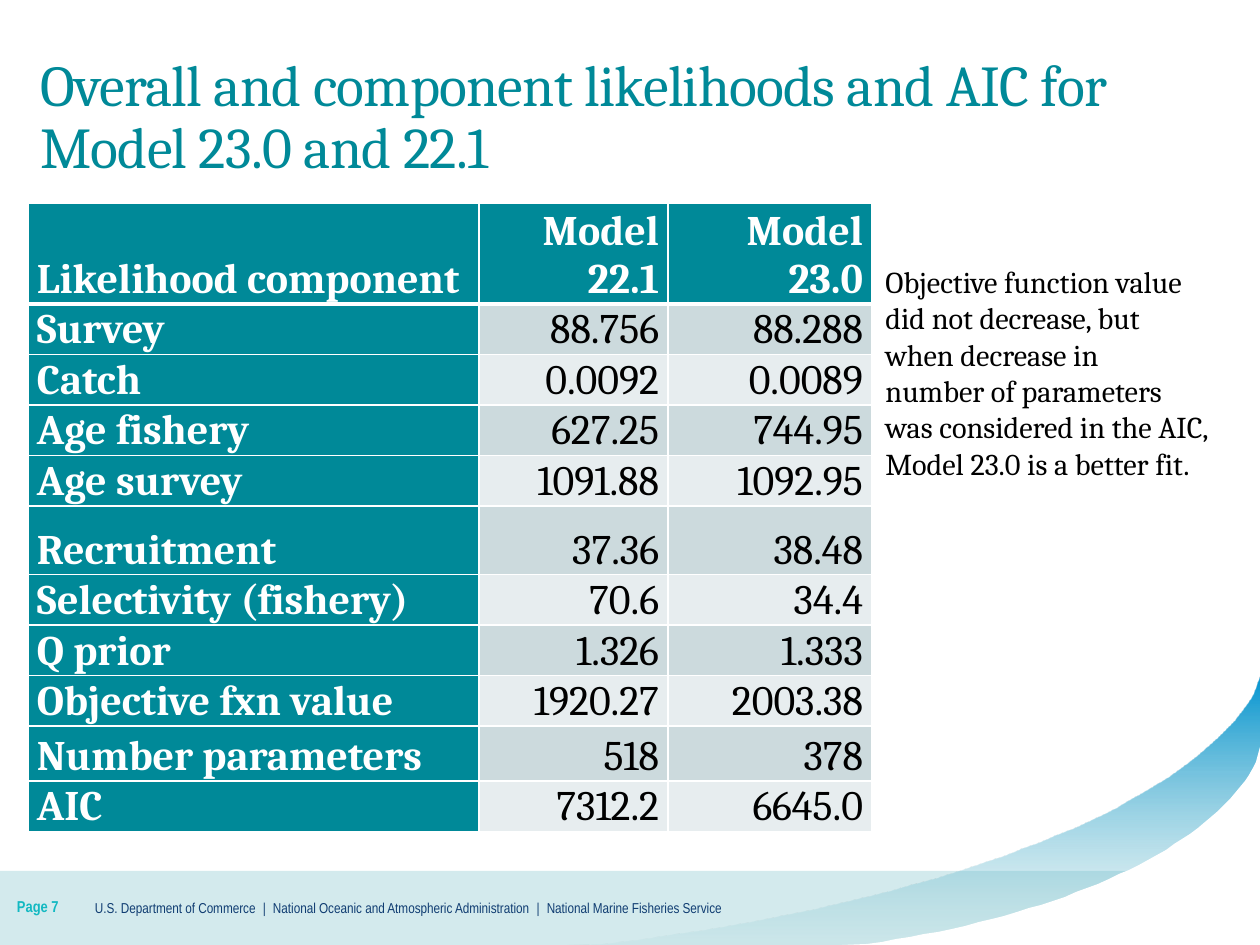
from lxml.etree import SubElement
from pptx import Presentation
from pptx.dml.color import RGBColor
from pptx.enum.shapes import MSO_SHAPE
from pptx.enum.text import MSO_ANCHOR, PP_ALIGN
from pptx.oxml.ns import qn
from pptx.util import Emu, Pt

SCALE = 914400 / 126  # EMU per px

TEAL = RGBColor(0x00, 0x89, 0x98)
BAND = RGBColor(0xD3, 0xEA, 0xED)
SWOOSH_TOP = RGBColor(0x00, 0x93, 0xD0)
SWOOSH_END = RGBColor(0x84, 0xC4, 0xCC)
NAVY = RGBColor(0x10, 0x3D, 0x72)
AQUA = RGBColor(0x13, 0xB9, 0xC2)
ROW_DARK = RGBColor(0xCC, 0xDA, 0xDD)
ROW_LIGHT = RGBColor(0xE7, 0xED, 0xEF)
WHITE = RGBColor(0xFF, 0xFF, 0xFF)
BLACK = RGBColor(0x00, 0x00, 0x00)

HEADER = ("Likelihood component", "Model 22.1", "Model 23.0")
LIKELIHOODS = [
    ("Survey", "88.756", "88.288"),
    ("Catch", "0.0092", "0.0089"),
    ("Age fishery", "627.25", "744.95"),
    ("Age survey", "1091.88", "1092.95"),
    ("Recruitment", "37.36", "38.48"),
    ("Selectivity (fishery)", "70.6", "34.4"),
    ("Q prior", "1.326", "1.333"),
    ("Objective fxn value", "1920.27", "2003.38"),
    ("Number parameters", "518", "378"),
    ("AIC", "7312.2", "6645.0"),
]
COLUMN_WIDTHS = (451, 189, 204)
ROW_HEIGHTS = (101, 50, 47, 50, 50, 69, 50, 50, 50, 55, 50)


def px(length):
    return Emu(round(length * SCALE))


def curve(start, control_a, control_b, end, steps=40):
    """Points along a cubic Bezier curve."""
    points = []
    for step in range(steps + 1):
        t = step / steps
        weights = ((1 - t) ** 3, 3 * t * (1 - t) ** 2, 3 * t * t * (1 - t), t ** 3)
        points.append(tuple(
            sum(w * p[axis] for w, p in zip(weights, (start, control_a, control_b, end)))
            for axis in (0, 1)))
    return points


class SlideBuilder:
    def __init__(self, slide):
        self.slide = slide
        self.heading_font = "Cambria"
        self.footer_font = "Arial Narrow"

    def set_font(self, font, size, color, name, bold=False):
        for key, value in dict(size=Pt(size), name=name, bold=bold).items():
            setattr(font, key, value)
        font.color.rgb = color

    def band(self, left, top, width, height, color):
        band = self.slide.shapes.add_shape(
            MSO_SHAPE.RECTANGLE, px(left), px(top), px(width), px(height))
        self.paint(band, color)

    def paint(self, shape, color):
        shape.shadow.inherit = False
        shape.line.fill.background()
        shape.fill.solid()
        shape.fill.fore_color.rgb = color

    def outline(self, points, color):
        builder = self.slide.shapes.build_freeform(*points[0], scale=SCALE)
        builder.add_line_segments(points[1:], close=True)
        outline = builder.convert_to_shape()
        self.paint(outline, color)
        return outline

    def fade(self, shape, top_color, end_color, end_alpha):
        shape.fill.gradient()
        shape.fill.gradient_angle = 270
        stops = shape.fill.gradient_stops
        for stop, color, position in zip(stops, (top_color, end_color), (0, 0.99)):
            stop.color.rgb = color
            stop.position = position
        end_rgb = list(shape.fill._xPr.iter(qn("a:srgbClr")))[-1]
        SubElement(end_rgb, qn("a:alpha"), val=str(end_alpha * 1000))

    def text(self, box, paragraphs, size, color, font, bold=False, spacing=None,
             tracking=None, **frame_format):
        frame = self.slide.shapes.add_textbox(*map(px, box)).text_frame
        for key, value in dict(word_wrap=True, **frame_format).items():
            setattr(frame, key, value)
        for index, words in enumerate(paragraphs):
            paragraph = frame.add_paragraph() if index else frame.paragraphs[0]
            paragraph.line_spacing = spacing
            run = paragraph.add_run()
            run.text = words
            self.set_font(run.font, size, color, font, bold)
            if tracking:
                run.font._element.set("spc", str(tracking))

    def border(self, cell, side, width):
        line = SubElement(cell._tc.get_or_add_tcPr(), qn(f"a:ln{side}"), w=str(Pt(width)))
        SubElement(SubElement(line, qn("a:solidFill")), qn("a:srgbClr"), val=str(WHITE))

    def cell(self, cell, words, row, column):
        label = row == 0 or column == 0
        for side in "LRTB":
            under_header = (row, side) in ((0, "B"), (1, "T"))
            self.border(cell, side, 3 if under_header else 1)
        cell.fill.solid()
        cell.fill.fore_color.rgb = TEAL if label else ROW_DARK if row % 2 else ROW_LIGHT
        cell_format = dict(margin_left=px(9), margin_right=px(9), margin_top=0,
                           margin_bottom=0, vertical_anchor=MSO_ANCHOR.BOTTOM)
        for key, value in cell_format.items():
            setattr(cell, key, value)
        paragraph = cell.text_frame.paragraphs[0]
        paragraph.alignment = PP_ALIGN.RIGHT if column else PP_ALIGN.LEFT
        run = paragraph.add_run()
        run.text = words
        self.set_font(run.font, 24, WHITE if label else BLACK, self.heading_font, label)

    def table(self, left, top, rows, widths, heights):
        table = self.slide.shapes.add_table(
            len(rows), len(widths), px(left), px(top),
            px(sum(widths)), px(sum(heights))).table
        for column, width in zip(table.columns, widths):
            column.width = px(width)
        for r, (values, height) in enumerate(zip(rows, heights)):
            table.rows[r].height = px(height)
            for c, words in enumerate(values):
                self.cell(table.cell(r, c), words, r, c)


def main():
    deck = Presentation()
    deck.slide_width, deck.slide_height = px(1260), px(945)
    page = SlideBuilder(deck.slides.add_slide(deck.slide_layouts[6]))

    # Footer band and swoosh
    page.band(0, 871, 1260, 74, BAND)
    swoosh = page.outline(
        [(558, 945), (1260, 945), (1260, 674)]
        + curve((1252, 696), (1181, 811), (930, 905), (600, 944)), WHITE)
    page.fade(swoosh, SWOOSH_TOP, SWOOSH_END, 9)
    page.outline(
        [(842, 945), (1260, 945), (1260, 747)]
        + curve((1256, 762), (1213, 847), (1063, 916), (867, 944)), WHITE)

    # Footer text
    footer_format = dict(font=page.footer_font, vertical_anchor=MSO_ANCHOR.MIDDLE,
                         margin_left=0, margin_right=0)
    page.text((95, 871, 922, 74), [
        "U.S. Department of Commerce\u2002|\u2002National Oceanic and Atmospheric "
        "Administration\u2002|\u2002National Marine Fisheries Service"],
        8.2, NAVY, **footer_format)
    page.text((17, 868, 77, 77), ["Page 7"], 9, AQUA, bold=True,
              margin_top=0, margin_bottom=0, **footer_format)

    # Title
    page.text((28, 50, 1145, 183),
              ["Overall and component likelihoods and AIC for Model 23.0 and 22.1"],
              33, TEAL, page.heading_font, spacing=0.9, tracking=-40)

    # Likelihood table
    page.table(28, 203, [HEADER, *LIKELIHOODS], COLUMN_WIDTHS, ROW_HEIGHTS)

    # Comment on the fit
    page.text((873, 257, 359, 270), [
        "Objective function value did not decrease, but",
        "when decrease in",
        "number of parameters",
        "was considered in the AIC, Model 23.0 is a better fit."],
        17.3, BLACK, page.heading_font)

    deck.save("out.pptx")


if __name__ == "__main__":
    main()
